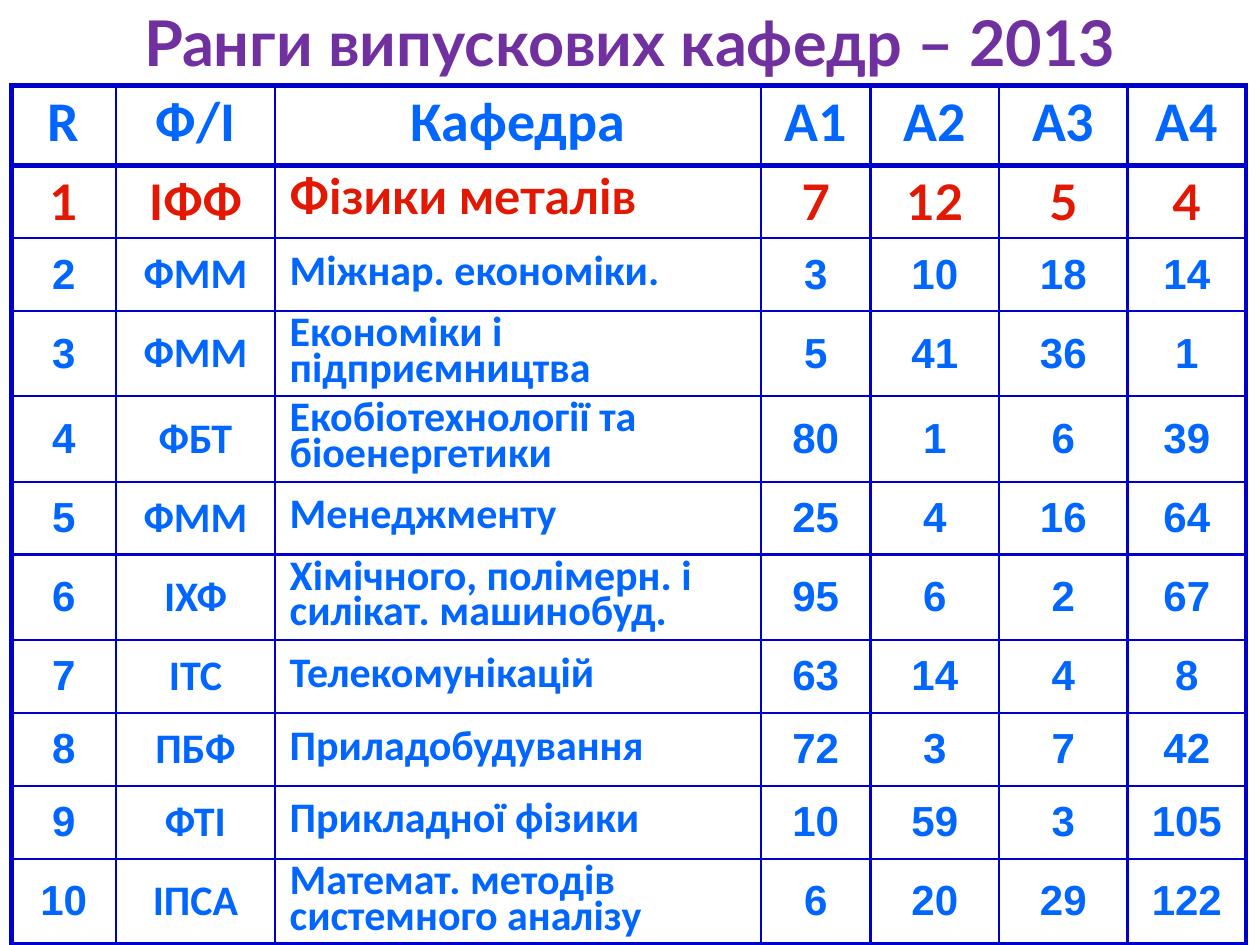
from lxml import etree
from pptx import Presentation
from pptx import util as u
from pptx.dml.color import RGBColor
from pptx.enum import text
from pptx.oxml import ns

BLUE = RGBColor(0x00, 0x66, 0xFF)
RED = RGBColor(0xE3, 0x18, 0x03)
PURPLE = RGBColor(0x70, 0x30, 0xA0)
NAVY = RGBColor(0x00, 0x00, 0xCC)
THICK, THIN = 3, 1.5
MID = text.MSO_ANCHOR.MIDDLE

COLS = [2.11, 3.2, 9.8, 2.21, 2.59, 2.59, 2.39]
HEAD_H, ROW_H, TALL_H = 1.6, 1.47, 1.72
NAME = 2
HEAD = ["R", "Ф/І", "Кафедра", "А1", "А2", "А3", "А4"]
RANKS = [
    ("ІФФ", "Фiзики металiв", 7, 12, 5, 4),
    ("ФММ", "Міжнар. економіки.", 3, 10, 18, 14),
    ("ФММ", "Економіки і підприємництва", 5, 41, 36, 1),
    ("ФБТ", "Екобіотехнології та біоенергетики", 80, 1, 6, 39),
    ("ФММ", "Менеджменту", 25, 4, 16, 64),
    ("ІХФ", "Хiмiчного, полiмерн. i силiкат. машинобуд.", 95, 6, 2, 67),
    ("ІТС", "Телекомунiкацiй", 63, 14, 4, 8),
    ("ПБФ", "Приладобудування", 72, 3, 7, 42),
    ("ФТІ", "Прикладної фізики", 10, 59, 3, 105),
    ("ІПСА", "Математ. методів системного аналізу", 6, 20, 29, 122),
]


def write(frame, words, size=24, font="Arial", color=BLUE, line=None,
          left=False, indent=0):
    para = frame.paragraphs[0]
    para.alignment = text.PP_ALIGN.LEFT if left else text.PP_ALIGN.CENTER
    if line:
        para.line_spacing = line
    if indent:
        para._p.get_or_add_pPr().set("marL", str(u.Cm(indent)))
    run = para.add_run()
    run.text = str(words)
    run.font.size = u.Pt(size)
    run.font.name = font
    run.font.bold = True
    run.font.color.rgb = color


class Deck:
    def __init__(self):
        self.prs = Presentation()
        self.prs.slide_width, self.prs.slide_height = u.Cm(25.4), u.Cm(19.05)
        self.slide = self.prs.slides.add_slide(self.prs.slide_layouts[6])

    def title(self, words, x, y, w, h):
        box = self.slide.shapes.add_textbox(*map(u.Cm, (x, y, w, h)))
        frame = box.text_frame
        frame.word_wrap = True
        frame.vertical_anchor = MID
        write(frame, words, size=36, font="Lato", color=PURPLE, line=0.8)

    def edge(self, cell, side, width):
        props = cell._tc.get_or_add_tcPr()
        line = etree.SubElement(props, ns.qn("a:ln" + side),
                                w=str(u.Pt(width)))
        fill = etree.SubElement(line, ns.qn("a:solidFill"))
        etree.SubElement(fill, ns.qn("a:srgbClr"), val=str(NAVY))

    def style(self, row, col):
        if row == 0:
            look = dict(size=32, font="Calibri", line=0.8)
        elif row == 1:
            look = dict(size=28, font="Lato", color=RED)
        else:
            look = dict(font="Calibri" if col in (1, NAME) else "Arial")
        if row and col == NAME:
            look.update(line=0.7, left=True, indent=0.3)
        return look

    def table(self, rows, x, y, widths, heights):
        place = map(u.Cm, (x, y, sum(widths), sum(heights)))
        grid = self.slide.shapes.add_table(
            len(rows), len(widths), *place).table
        grid.first_row = grid.horz_banding = False
        for col, width in zip(grid.columns, widths):
            col.width = u.Cm(width)
        for row, height in zip(grid.rows, heights):
            row.height = u.Cm(height)
        end, last = len(rows) - 1, len(widths) - 1
        for r, items in enumerate(rows):
            for c, words in enumerate(items):
                cell = grid.cell(r, c)
                cell.margin_left = cell.margin_right = 0
                cell.margin_top = cell.margin_bottom = 0
                cell.vertical_anchor = MID
                # Thick frame and header rule, thin inner lines
                bold = {"L": c == 0, "R": c == last,
                        "T": r <= 1, "B": r in (0, end)}
                for side, thick in bold.items():
                    self.edge(cell, side, THICK if thick else THIN)
                cell.fill.background()
                write(cell.text_frame, words, **self.style(r, c))


def main():
    deck = Deck()
    # Heading
    deck.title("Ранги випускових кафедр – 2013", 0, 0.25, 25.4, 1.47)
    # Ranking; names that wrap get a taller row
    rows = [HEAD] + [(n, *rank) for n, rank in enumerate(RANKS, 1)]
    heights = [HEAD_H] + [TALL_H if len(rank[1]) > 20 else ROW_H
                          for rank in RANKS]
    deck.table(rows, 0.23, 1.73, COLS, heights)
    deck.prs.save("out.pptx")


if __name__ == "__main__":
    main()
